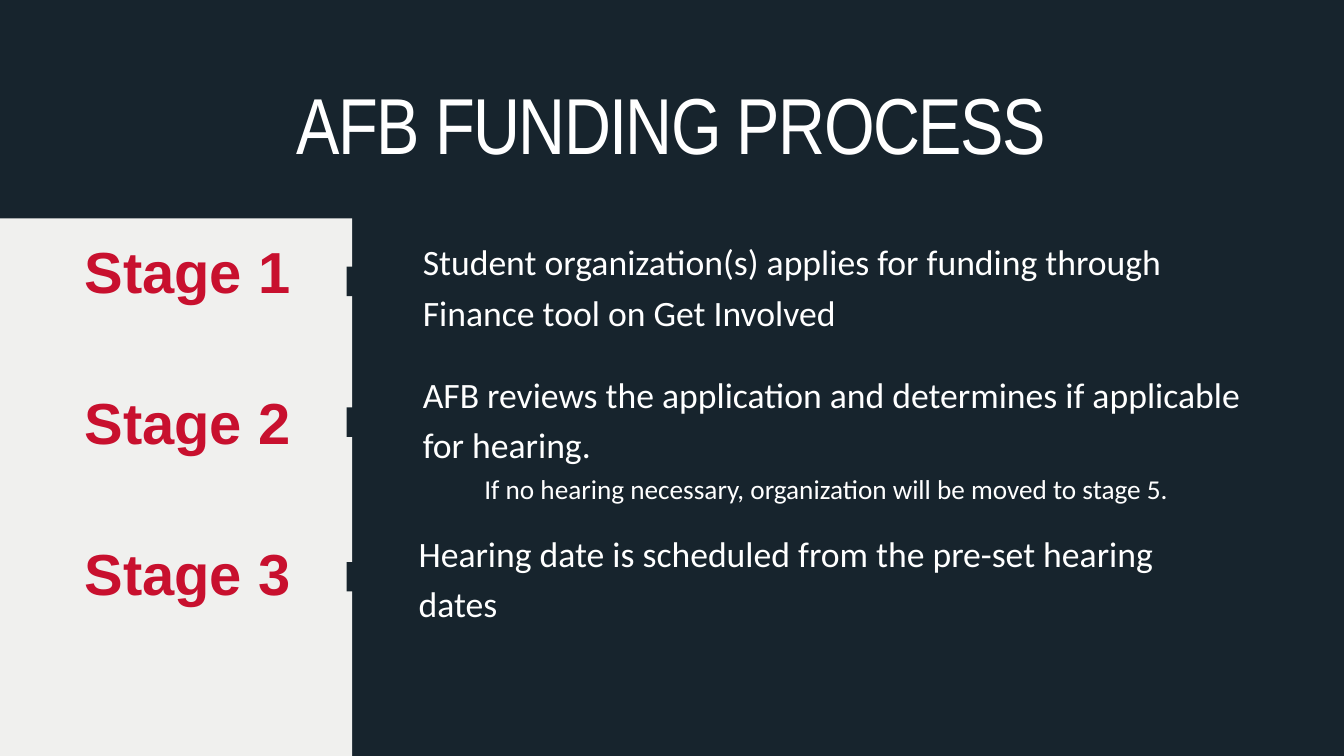
import pptx
import pptx.dml.color
import pptx.enum.shapes
import pptx.enum.text
import pptx.util

PX = 9525  # EMU per px, 96 px to the inch
NAVY, WHITE, RED, PALE = "17242D", "FFFFFF", "C8102E", "F0F0EE"
ALIGN = pptx.enum.text.PP_ALIGN

TITLE = {"size": 85, "name": "Arial Narrow", "color": WHITE, "bold": False,
         "leading": 102, "align": ALIGN.CENTER, "spacing": -170, "indent": 0}
STAGE = {"size": 62, "name": "Arial", "color": RED, "bold": True,
         "leading": 74.4, "align": ALIGN.CENTER, "spacing": 0, "indent": 0}
STEP = {"size": 38.2, "name": "Calibri", "color": WHITE, "bold": False,
        "leading": 54.2, "align": ALIGN.LEFT, "spacing": 0, "indent": 0}
NOTE = STEP | {"size": 29.2, "leading": 41.4, "indent": 88}

deck = pptx.Presentation()
deck.slide_width, deck.slide_height = 1920 * PX, 1080 * PX
slide = deck.slides.add_slide(deck.slide_layouts[6])
slide.background.fill.solid()
slide.background.fill.fore_color.rgb = pptx.dml.color.RGBColor.from_string(NAVY)


def add_block(left, top, width, height, color):
    block = slide.shapes.add_shape(pptx.enum.shapes.MSO_SHAPE.RECTANGLE,
                                   left * PX, top * PX, width * PX, height * PX)
    block.shadow.inherit = False
    block.fill.solid()
    block.fill.fore_color.rgb = pptx.dml.color.RGBColor.from_string(color)
    block.line.fill.background()


def add_text(left, top, width, height, lines):
    frame = slide.shapes.add_textbox(left * PX, top * PX, width * PX, height * PX).text_frame
    settings = {"word_wrap": True, "margin_left": 0, "margin_right": 0,
                "margin_top": 0, "margin_bottom": 0,
                "auto_size": pptx.enum.text.MSO_AUTO_SIZE.SHAPE_TO_FIT_TEXT}
    for key, value in settings.items():
        setattr(frame, key, value)
    for number, (words, style) in enumerate(lines):
        paragraph = frame.add_paragraph() if number else frame.paragraphs[0]
        paragraph.alignment = style["align"]
        paragraph.line_spacing = pptx.util.Pt(style["leading"])
        if style["indent"]:
            paragraph._p.get_or_add_pPr().set("marL", str(style["indent"] * PX))
        run = paragraph.add_run()
        run.text = words
        font = {"size": pptx.util.Pt(style["size"]), "name": style["name"], "bold": style["bold"]}
        for key, value in font.items():
            setattr(run.font, key, value)
        run.font.color.rgb = pptx.dml.color.RGBColor.from_string(style["color"])
        if style["spacing"]:
            run._r.get_or_add_rPr().set("spc", str(style["spacing"]))


# Pale side panel, running off the bottom edge
add_block(0, 312, 503, 1040, PALE)

# Stages: label top, notch top, step left, top and height, step lines
stages = [
    (336, 381, 604, 332, 150,
     [("Student organization(s) applies for funding through Finance tool on Get Involved", STEP)]),
    (553, 582, 604, 521, 206,
     [("AFB reviews the application and determines if applicable for hearing.", STEP),
      ("If no hearing necessary, organization will be moved to stage 5.", NOTE)]),
    (768, 803, 598, 748, 150,
     [("Hearing date is scheduled from the pre-set hearing dates", STEP)]),
]
for number, (label_top, notch_top, left, top, height, step) in enumerate(stages, 1):
    add_block(495, notch_top, 42, 42, NAVY)
    add_text(108, label_top, 320, 112, [(f"Stage {number}", STAGE)])
    add_text(left, top, 1171, height, step)

# Title
add_text(105, 108, 1707, 135, [("AFB FUNDING PROCESS", TITLE)])

deck.save("out.pptx")
